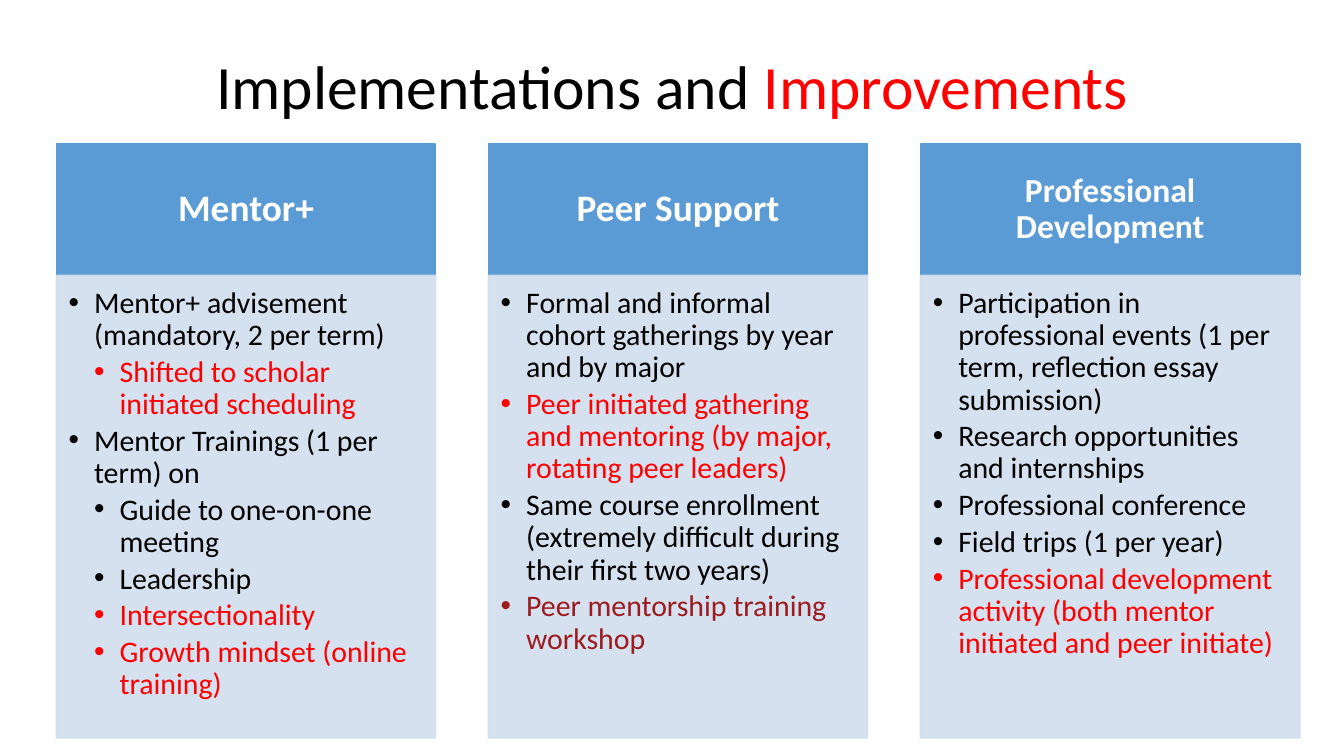
from dataclasses import dataclass

from lxml.etree import SubElement
from pptx import Presentation
from pptx.dml.color import RGBColor
from pptx.enum.shapes import MSO_SHAPE
from pptx.enum.text import MSO_ANCHOR, PP_ALIGN
from pptx.oxml.ns import qn
from pptx.util import Inches, Pt


@dataclass(frozen=True)
class Theme:
    font: str = "Calibri"
    text: str = "000000"
    change: str = "FF0000"
    planned: str = "9B1B1E"
    heading_text: str = "FFFFFF"
    heading_fill: str = "5B9BD5"
    body_fill: str = "D2DEEF"
    body_opacity: int = 90
    title_size: float = 33
    body_size: float = 16
    line_spacing: float = 0.9


THEME = Theme()

# Content: each bullet is (level, text, colour)
TITLE = [("Implementations and ", THEME.text), ("Improvements", THEME.change)]
COLUMNS = [
    {"heading": "Mentor+", "size": 20, "bullets": [
        (1, "Mentor+ advisement (mandatory, 2 per term)", THEME.text),
        (2, "Shifted to scholar initiated scheduling", THEME.change),
        (1, "Mentor Trainings (1 per term) on", THEME.text),
        (2, "Guide to one-on-one meeting", THEME.text),
        (2, "Leadership", THEME.text),
        (2, "Intersectionality", THEME.change),
        (2, "Growth mindset (online training)", THEME.change),
    ]},
    {"heading": "Peer Support", "size": 20, "bullets": [
        (1, "Formal and informal cohort gatherings by year and by major", THEME.text),
        (1, "Peer initiated gathering and mentoring (by major, rotating peer leaders)",
         THEME.change),
        (1, "Same course enrollment (extremely difficult during their first two years)",
         THEME.text),
        (1, "Peer mentorship training workshop", THEME.planned),
    ]},
    {"heading": "Professional Development", "size": 18, "bullets": [
        (1, "Participation in professional events (1 per term, reflection essay submission)",
         THEME.text),
        (1, "Research opportunities and internships", THEME.text),
        (1, "Professional conference", THEME.text),
        (1, "Field trips (1 per year)", THEME.text),
        (1, "Professional development activity (both mentor initiated and peer initiate)",
         THEME.change),
    ]},
]

# Grid, in inches; the slide is 16:9
SLIDE_WIDTH = 10
SLIDE_HEIGHT = SLIDE_WIDTH * 9 / 16
TITLE_BOX = (0.69, 0.12, 8.62, 1.09)
GRID_LEFT, GRID_RIGHT, GRID_TOP = 0.42, 9.67, 1.07
COLUMN_WIDTH = 2.82
COLUMN_STEP = (GRID_RIGHT - GRID_LEFT - COLUMN_WIDTH) / (len(COLUMNS) - 1)
HEADING_HEIGHT, BODY_HEIGHT = 0.98, 3.44
INDENT = 0.19


def set_font(font, size, color, bold=False):
    font.name, font.size, font.bold = THEME.font, Pt(size), bold
    font.color.rgb = RGBColor.from_string(color)


def set_insets(frame, left, top, right, bottom):
    frame.margin_left, frame.margin_top = Inches(left), Inches(top)
    frame.margin_right, frame.margin_bottom = Inches(right), Inches(bottom)


def add_panel(page, left, top, height, color, opacity=100):
    panel = page.shapes.add_shape(
        MSO_SHAPE.RECTANGLE, Inches(left), Inches(top), Inches(COLUMN_WIDTH), Inches(height))
    panel.shadow.inherit = False
    panel.fill.solid()
    panel.fill.fore_color.rgb = panel.line.color.rgb = RGBColor.from_string(color)
    panel.line.width = Pt(1)
    if opacity < 100:
        for swatch in panel.element.spPr.findall(".//" + qn("a:srgbClr")):
            SubElement(swatch, qn("a:alpha"), val=str(opacity * 1000))
    panel.text_frame.word_wrap = True
    return panel


def add_bullet(para, level, color):
    para.level = level
    properties = para._p.get_or_add_pPr()
    properties.set("marL", str(Inches(INDENT * level)))
    properties.set("indent", str(-Inches(INDENT)))
    bullet_color = SubElement(properties, qn("a:buClr"))
    SubElement(bullet_color, qn("a:srgbClr"), val=color)
    SubElement(properties, qn("a:buFont"), typeface="Arial")
    SubElement(properties, qn("a:buChar"), char="•")


def add_title(page):
    title = page.shapes.title
    title.left, title.top, title.width, title.height = map(Inches, TITLE_BOX)
    title.text_frame.vertical_anchor = MSO_ANCHOR.MIDDLE
    para = title.text_frame.paragraphs[0]
    para.alignment = PP_ALIGN.CENTER
    para.line_spacing = THEME.line_spacing
    for text, color in TITLE:
        span = para.add_run()
        span.text = text
        set_font(span.font, THEME.title_size, color)


def add_heading(page, left, text, size):
    panel = add_panel(page, left, GRID_TOP, HEADING_HEIGHT, THEME.heading_fill)
    frame = panel.text_frame
    frame.vertical_anchor = MSO_ANCHOR.MIDDLE
    set_insets(frame, 0.15, 0.09, 0.15, 0.09)
    para = frame.paragraphs[0]
    para.text = text
    para.alignment = PP_ALIGN.CENTER
    para.line_spacing = THEME.line_spacing
    set_font(para.font, size, THEME.heading_text, bold=True)


def add_body(page, left, bullets):
    panel = add_panel(page, left, GRID_TOP + HEADING_HEIGHT, BODY_HEIGHT,
                      THEME.body_fill, THEME.body_opacity)
    frame = panel.text_frame
    frame.vertical_anchor = MSO_ANCHOR.TOP
    set_insets(frame, 0.09, 0.09, 0.12, 0.14)
    for index, (level, text, color) in enumerate(bullets):
        para = frame.add_paragraph() if index else frame.paragraphs[0]
        para.text = text
        add_bullet(para, level, color)
        para.alignment = PP_ALIGN.LEFT
        para.line_spacing = THEME.line_spacing
        para.space_after = Pt(THEME.body_size * 0.15)
        set_font(para.font, THEME.body_size, color)


def main():
    deck = Presentation()
    deck.slide_width, deck.slide_height = Inches(SLIDE_WIDTH), Inches(SLIDE_HEIGHT)
    page = deck.slides.add_slide(deck.slide_layouts.get_by_name("Title Only"))

    add_title(page)
    for index, column in enumerate(COLUMNS):
        left = GRID_LEFT + index * COLUMN_STEP
        add_heading(page, left, column["heading"], column["size"])
        add_body(page, left, column["bullets"])

    deck.save("out.pptx")


if __name__ == "__main__":
    main()
